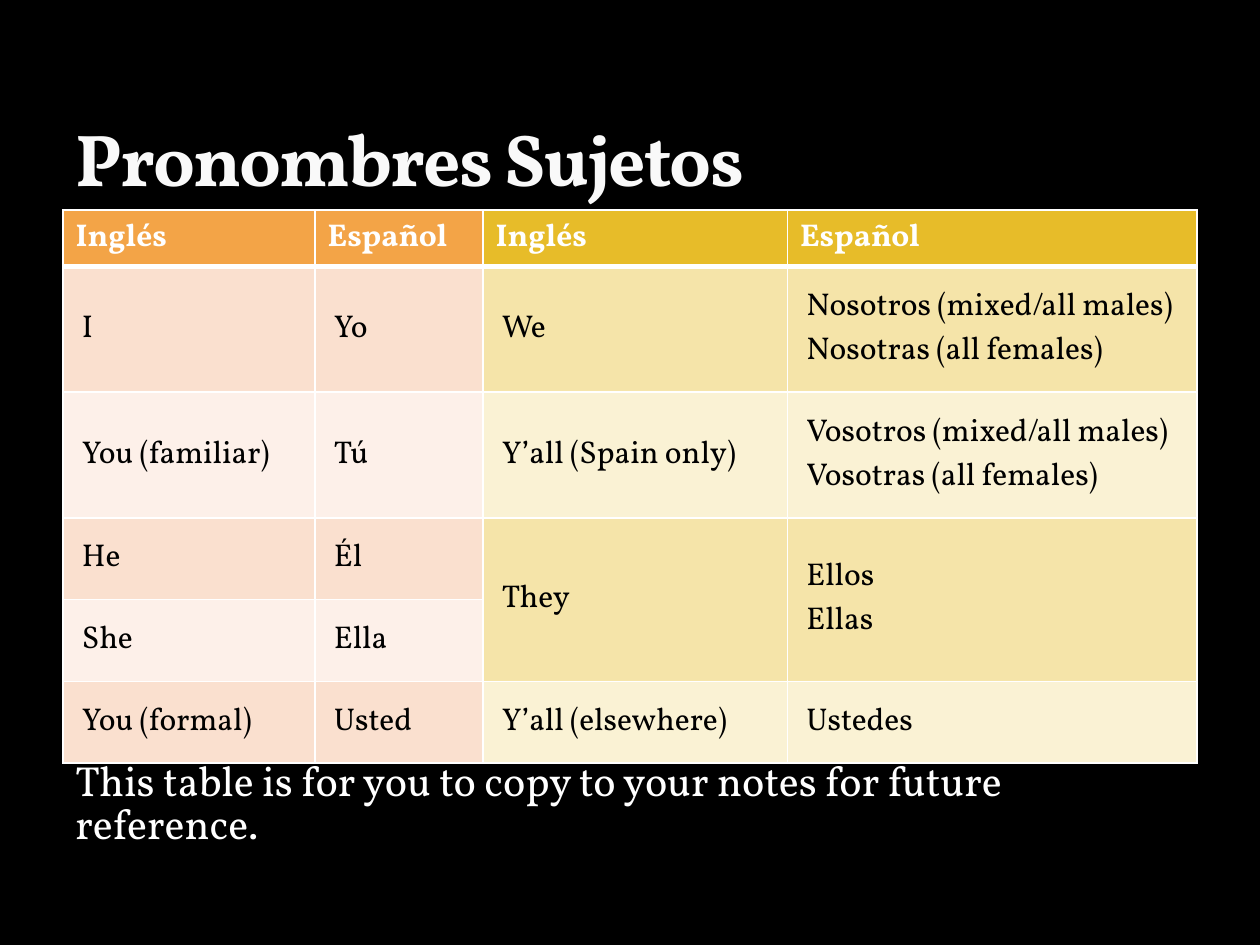
from dataclasses import dataclass

from lxml.etree import SubElement
from pptx import Presentation
from pptx.dml.color import RGBColor
from pptx.enum.text import MSO_ANCHOR
from pptx.oxml.ns import qn
from pptx.util import Inches, Pt

UNIT = Inches(10) / 60


@dataclass(frozen=True)
class Theme:
    """Colours, font and type sizes of the slide."""
    font: str = "Vollkorn"
    background: str = "000000"
    title: str = "F9F9F9"
    light: str = "FFFFFF"
    dark: str = "000000"
    heads: tuple = ("F3A447", "E7BC29")
    bands: tuple = (("FAE0CF", "FDF0E9"), ("F5E4A9", "FAF2D4"))
    title_size: int = 42
    note_size: int = 24
    cell_size: int = 18


THEME = Theme()
COLUMNS = (12, 8, 14.5, 19.5)
ROW = 2.46
PRONOUNS = (
    ("Inglés", "Español", "Inglés", "Español"),
    ("I", "Yo", "We", "Nosotros (mixed/all males)\nNosotras (all females)"),
    ("You (familiar)", "Tú", "Y’all (Spain only)",
     "Vosotros (mixed/all males)\nVosotras (all females)"),
    ("He", "Él", "They", "Ellos\nEllas"),
    ("She", "Ella", None, None),
    ("You (formal)", "Usted", "Y’all (elsewhere)", "Ustedes"),
)


def grid(*units):
    """Turn grid units into slide lengths."""
    return [round(u * UNIT) for u in units]


def style(tf, size, color, bold=False):
    """Format every run of a text frame."""
    for p in tf.paragraphs:
        for r in p.runs:
            r.font.name = THEME.font
            r.font.size = Pt(size)
            r.font.bold = bold
            r.font.color.rgb = RGBColor.from_string(color)


def add_text(s, box, text, size, color, bold=False):
    """Add a wrapping text box and return its frame."""
    tf = s.shapes.add_textbox(*grid(*box)).text_frame
    tf.word_wrap = True
    tf.text = text
    style(tf, size, color, bold)
    return tf


def add_title(s, box):
    """Add the bold heading, standing on the bottom of its box."""
    tf = add_text(s, box, "Pronombres Sujetos", THEME.title_size, THEME.title, True)
    tf.vertical_anchor = MSO_ANCHOR.BOTTOM
    tf.margin_bottom = 0
    tf.paragraphs[0].runs[0]._r.get_or_add_rPr().set("spc", "-100")


def add_note(s, box):
    """Add the remark below the table."""
    tf = add_text(s, box, "This table is for you to copy to your notes for future reference.",
                  THEME.note_size, THEME.light)
    p = tf.paragraphs[0]
    p.line_spacing = 0.85
    p.space_before = Pt(6)


def set_borders(cell, row):
    """Draw the cell's borders, heavier between header and body."""
    heavy = {0: "lnB", 1: "lnT"}.get(row)
    for side in ("lnL", "lnR", "lnT", "lnB"):
        ln = SubElement(cell._tc.get_or_add_tcPr(), qn(f"a:{side}"),
                        w=str(Pt(3 if side == heavy else 1)))
        SubElement(SubElement(ln, qn("a:solidFill")), qn("a:srgbClr"), val=THEME.light)


def fill_cell(cell, row, col, text):
    """Write and format one cell of the pronoun table."""
    half = col // 2
    header = row == 0
    band = 1 if row in (2, 4) or (row == 5 and half) else 0
    set_borders(cell, row)
    cell.fill.solid()
    cell.fill.fore_color.rgb = RGBColor.from_string(
        THEME.heads[half] if header else THEME.bands[half][band])
    if text is None:
        return
    cell.text_frame.text = text
    style(cell.text_frame, THEME.cell_size, THEME.light if header else THEME.dark, header)
    if not header:
        cell.vertical_anchor = MSO_ANCHOR.MIDDLE
        cell.margin_left = cell.margin_right = Inches(0.15)
        cell.margin_top = cell.margin_bottom = Inches(0.15)


def add_pronouns(s, box):
    """Add the table of subject pronouns."""
    frame = s.shapes.add_table(len(PRONOUNS), len(COLUMNS), *grid(*box))
    table = frame.table
    for column, width in zip(table.columns, grid(*COLUMNS)):
        column.width = width
    for row in table.rows:
        row.height = grid(ROW)[0]
    frame.height = grid(box[3])[0]
    for col in (2, 3):
        table.cell(3, col).merge(table.cell(4, col))
    for i, texts in enumerate(PRONOUNS):
        for j, text in enumerate(texts):
            fill_cell(table.cell(i, j), i, j, text)


def main():
    """Build and save the slide."""
    prs = Presentation()
    prs.slide_width, prs.slide_height = grid(60, 45)
    s = prs.slides.add_slide(prs.slide_layouts[6])
    s.background.fill.solid()
    s.background.fill.fore_color.rgb = RGBColor.from_string(THEME.background)
    add_pronouns(s, (3, 10, 54, 24.06))
    add_title(s, (3, 1.6, 54, 8))
    add_note(s, (3, 36, 54, 3))
    prs.save("out.pptx")


if __name__ == "__main__":
    main()
